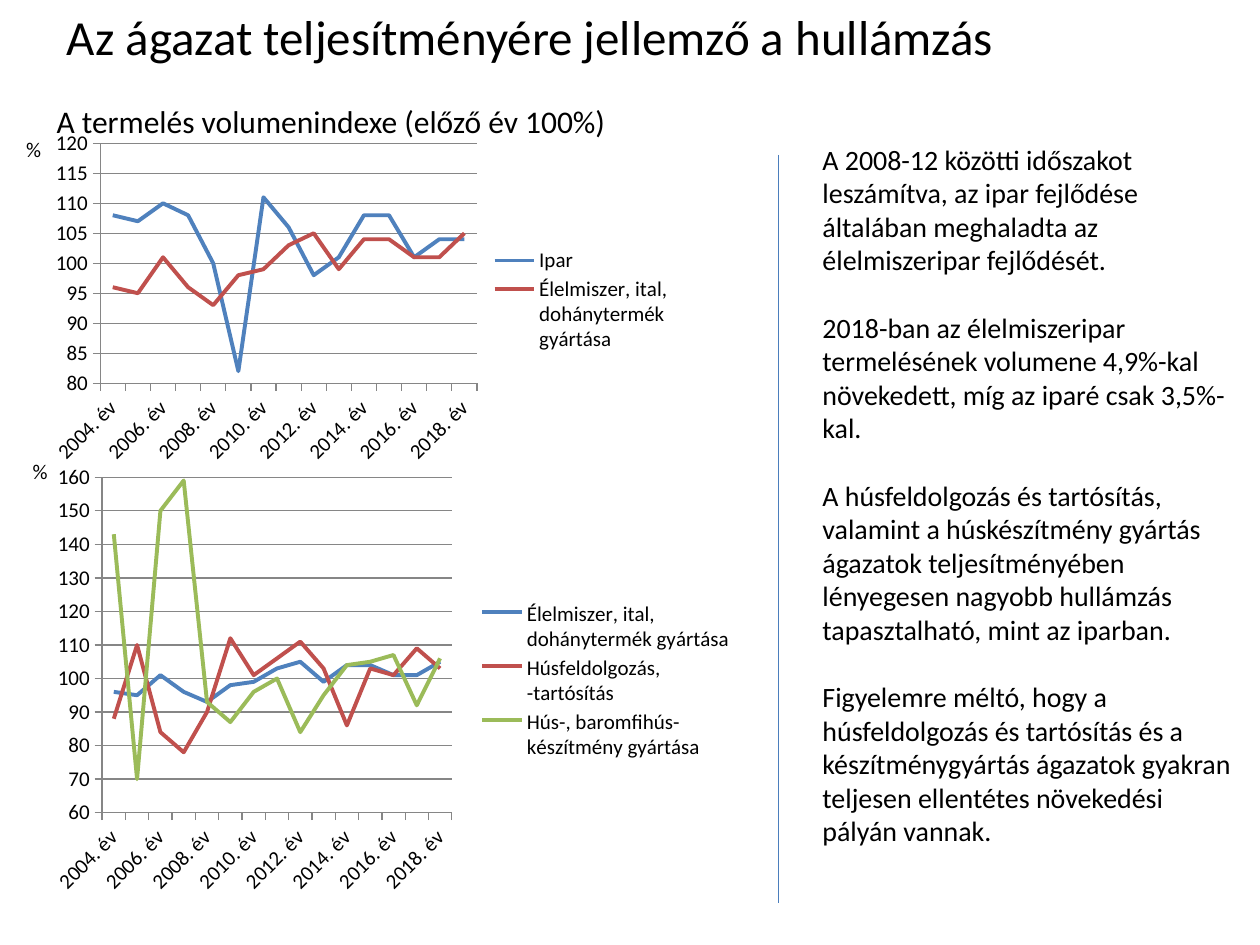
"""Build a slide on industry volume indices with two line charts and notes beside them."""
from lxml import etree
from pptx import Presentation
from pptx.chart.data import CategoryChartData as Data
from pptx.dml.color import RGBColor
from pptx.enum.chart import XL_CHART_TYPE as Kind, XL_LEGEND_POSITION as Side, XL_TICK_MARK as Tick
from pptx.enum.shapes import MSO_CONNECTOR as Link
from pptx.enum.text import MSO_ANCHOR as Anchor, MSO_AUTO_SIZE as Fit, PP_ALIGN as Align
from pptx.oxml import parse_xml
from pptx.oxml.ns import nsdecls, qn
from pptx.util import Cm, Pt

rgb = RGBColor.from_string


def write(shape, text, size=12, wrap=True, anchor=Anchor.TOP, gap=0, inset=0.25):
    """Fill a shape with one plain paragraph per line of text."""
    frame = shape.text_frame
    frame.text = text
    frame.word_wrap = wrap
    frame.auto_size = Fit.NONE
    frame.vertical_anchor = anchor
    frame.margin_left = frame.margin_right = Cm(inset)
    for para in frame.paragraphs:
        para.alignment = Align.LEFT
        para.space_before, para.space_after = Pt(0), Pt(gap)
        para.font.size, para.font.name = Pt(size), "Calibri"
        para.font.color.rgb = rgb("000000")
        props = para._p.get_or_add_pPr()
        props.set("marL", "0")
        props.set("indent", "0")
        etree.SubElement(props, qn("a:buNone")) if props.find(qn("a:defRPr")) is None \
            else props.find(qn("a:defRPr")).addprevious(etree.Element(qn("a:buNone")))


def arrange(part, spot, box, inner=False):
    """Fix the place of a chart part as fractions of the chart."""
    for old in part.findall(qn("c:layout")):
        part.remove(old)
    target = '<c:layoutTarget val="inner"/>' if inner else ""
    modes = "".join(f'<c:{k}Mode val="edge"/>' for k in "xy")
    sizes = "".join(f'<c:{k} val="{v}"/>' for k, v in zip("xywh", box))
    part.insert(spot, parse_xml(
        f'<c:layout {nsdecls("c")}><c:manualLayout>{target}{modes}{sizes}</c:manualLayout></c:layout>'))


deck = Presentation()
deck.slide_width, deck.slide_height = Cm(25.4), Cm(19.05)
slide = deck.slides.add_slide(deck.slide_layouts[1])
shapes = slide.shapes

title, body = shapes.title, slide.placeholders[1]
title.left, title.top, title.width, title.height = Cm(1.1), Cm(0.13), Cm(24.15), Cm(1.2)
write(title, "Az ágazat teljesítményére jellemző a hullámzás", size=28, anchor=Anchor.MIDDLE)

notes = [
    "A 2008-12 közötti időszakot leszámítva, az ipar fejlődése általában meghaladta az élelmiszeripar fejlődését.",
    "2018-ban az élelmiszeripar termelésének volumene 4,9%-kal növekedett, míg az iparé csak 3,5%-kal.",
    "A húsfeldolgozás és tartósítás, valamint a húskészítmény gyártás ágazatok teljesítményében "
    "lényegesen nagyobb hullámzás tapasztalható, mint az iparban.",
    "Figyelemre méltó, hogy a húsfeldolgozás és tartósítás és a készítménygyártás ágazatok gyakran "
    "teljesen ellentétes növekedési pályán vannak.",
]
body.left, body.top, body.width, body.height = Cm(16.33), Cm(2.74), Cm(8.94), Cm(14.63)
write(body, "\n".join(notes), size=16, gap=19.2)

rule = shapes.add_connector(Link.STRAIGHT, Cm(15.7), Cm(3.12), Cm(15.7), Cm(18.21))
rule.line.color.rgb, rule.line.width = rgb("4B7EBC"), Pt(0.75)
etree.SubElement(rule._element.spPr, qn("a:effectLst"))

years = [f"{year}. év" for year in range(2004, 2019)]
food = ("Élelmiszer, ital, dohánytermék gyártása",
        [96, 95, 101, 96, 93, 98, 99, 103, 105, 99, 104, 104, 101, 101, 105])
whole = ("Ipar", [108, 107, 110, 108, 100, 82, 111, 106, 98, 101, 108, 108, 101, 104, 104])
meat = ("Húsfeldolgozás, -tartósítás",
        [88, 110, 84, 78, 90, 112, 101, 106, 111, 103, 86, 103, 101, 109, 103])
cured = ("Hús-, baromfihús-készítmény gyártása",
         [143, 70, 150, 159, 93, 87, 96, 100, 84, 95, 104, 105, 107, 92, 106])
charts = [
    ((0.71, 2.54, 13.1, 7.01), (80, 120, 5), [whole, food],
     (0.1, 0.05, 0.58, 0.69), (0.7, 0.34, 0.28, 0.32)),
    ((0.79, 9.17, 14.1, 9.02), (60, 160, 10), [food, meat, cured],
     (0.09, 0.05, 0.5, 0.75), (0.62, 0.32, 0.38, 0.37)),
]
for place, (low, high, step), rows, plot, key in charts:
    data = Data(number_format="General")
    data.categories = years
    for name, vals in rows:
        data.add_series(name, vals)
    chart = shapes.add_chart(Kind.LINE, *map(Cm, place), data).chart
    chart.has_title = False
    chart.font.size, chart.font.name = Pt(12), "Calibri"
    chart.font.color.rgb = rgb("000000")
    chart.plots[0].vary_by_categories = False
    for row, hue in zip(chart.series, ["4F81BD", "C0504D", "9BBB59"]):
        row.smooth = False
        row.format.line.color.rgb, row.format.line.width = rgb(hue), Pt(2.25)

    cat, val = chart.category_axis, chart.value_axis
    val.minimum_scale, val.maximum_scale, val.major_unit = low, high, step
    val.has_major_gridlines = True
    for axis in (cat, val):
        axis.major_tick_mark, axis.minor_tick_mark = Tick.OUTSIDE, Tick.NONE
        axis.tick_labels.font.size = Pt(12)
    for item in (cat, val, val.major_gridlines):
        item.format.line.color.rgb, item.format.line.width = rgb("868686"), Pt(0.75)
    cat._element.find(qn("c:txPr")).find(qn("a:bodyPr")).set("rot", "-2700000")
    skip = etree.Element(qn("c:tickLblSkip"), val="2")
    cat._element.find(qn("c:noMultiLvlLbl")).addprevious(skip)

    chart.has_legend = True
    chart.legend.position, chart.legend.include_in_layout = Side.RIGHT, False
    chart.legend.font.size = Pt(12)
    arrange(chart.legend._element, 1, key)
    arrange(chart._chartSpace.chart.plotArea, 0, plot, inner=True)

labels = [
    ("%", (0.38, 2.62, 0.6, 0.76), 12, 0.15),
    ("%", (0.51, 9.12, 0.6, 0.76), 12, 0.15),
    ("A termelés volumenindexe (előző év 100%)", (0.89, 1.93, 15.44, 1.02), 18, 0.25),
]
for text, place, size, inset in labels:
    write(shapes.add_textbox(*map(Cm, place)), text, size=size, wrap=False, inset=inset)

deck.save("out.pptx")
